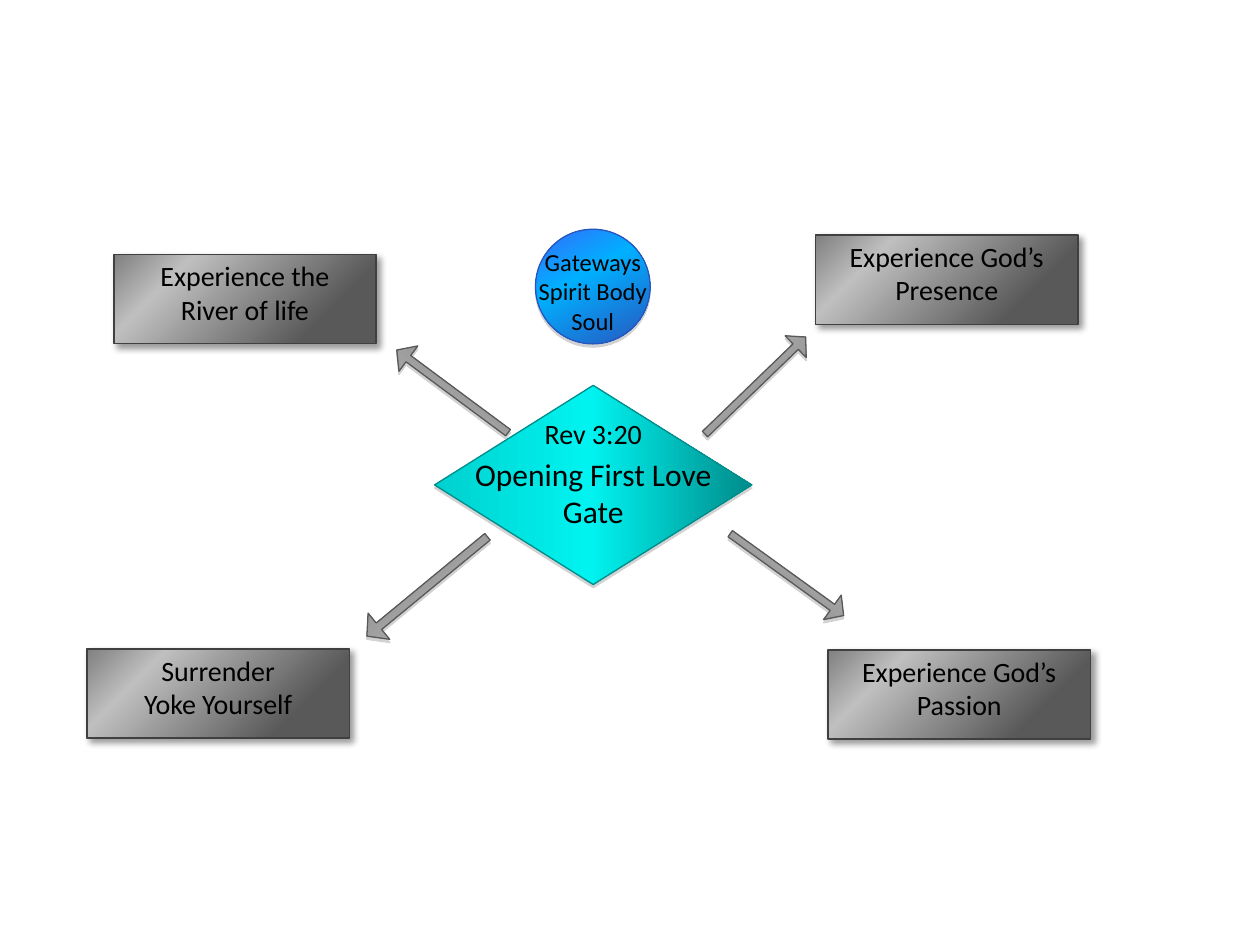
from dataclasses import dataclass

from lxml import etree
from pptx import Presentation
from pptx.dml.color import RGBColor
from pptx.enum.shapes import MSO_SHAPE
from pptx.enum.text import MSO_AUTO_SIZE, PP_ALIGN
from pptx.oxml.ns import qn
from pptx.util import Pt

RECTANGLE, DIAMOND = MSO_SHAPE.RECTANGLE, MSO_SHAPE.DIAMOND
ARROW, OVAL = MSO_SHAPE.RIGHT_ARROW, MSO_SHAPE.OVAL
CENTER = PP_ALIGN.CENTER
GROW = MSO_AUTO_SIZE.SHAPE_TO_FIT_TEXT


@dataclass(frozen=True)
class Look:
    stops: tuple
    angle: int
    outline: str
    outline_width: float
    shadow: tuple


@dataclass(frozen=True)
class Theme:
    font: str = "Calibri"
    text: str = "000000"
    small: int = 14
    body: int = 16
    title: int = 18
    soft: tuple = ("808080", 35, 0, 1.8, 90)
    card: Look = Look(((22, "595959"), (77, "BFBFBF"), (100, "808080")),
                      225, "404040", 1, ("000000", 40, 4, 3, 45))
    gate: Look = Look(((0, "00D1CF"), (49, "00F3F0"), (100, "008C8B")),
                      0, "008C8B", 0.75, soft)
    arrow: Look = Look(((0, "BFBFBF"), (100, "7F7F7F")),
                       90, "595959", 0.75, soft)
    gateways: Look = Look(((0, "336FFA"), (2, "336FFA"), (40, "00B0FF"), (100, "2856BF")),
                          61, "2856BF", 0.75, soft)


THEME = Theme()


def add_color(parent, color):
    return etree.SubElement(parent, qn("a:srgbClr"), val=color)


def paint_gradient(shape, look):
    shape.fill.gradient()
    gradient = shape._element.spPr.find(qn("a:gradFill"))
    for child in list(gradient):
        gradient.remove(child)
    gradient.set("rotWithShape", "1")
    stops = etree.SubElement(gradient, qn("a:gsLst"))
    for position, color in look.stops:
        add_color(etree.SubElement(stops, qn("a:gs"), pos=str(position * 1000)), color)
    etree.SubElement(gradient, qn("a:lin"), ang=str(look.angle * 60000), scaled="0")


def cast_shadow(shape, shadow):
    color, alpha, blur, distance, direction = shadow
    shape.shadow.inherit = False
    effects = shape._element.spPr.find(qn("a:effectLst"))
    outer = etree.SubElement(effects, qn("a:outerShdw"), blurRad=str(Pt(blur)),
                             dist=str(Pt(distance)), dir=str(direction * 60000),
                             rotWithShape="0")
    etree.SubElement(add_color(outer, color), qn("a:alpha"), val=str(alpha * 1000))


def add_solid(shapes, preset, box, look):
    solid = shapes.add_shape(preset, *map(Pt, box))
    paint_gradient(solid, look)
    solid.line.color.rgb = RGBColor.from_string(look.outline)
    solid.line.width = Pt(look.outline_width)
    cast_shadow(solid, look.shadow)
    return solid


def add_label(shapes, box, paragraphs, size):
    frame = shapes.add_textbox(*map(Pt, box)).text_frame
    frame_format = {"word_wrap": True, "auto_size": GROW, "margin_left": 0,
                    "margin_top": 0, "margin_right": 0, "margin_bottom": 0}
    for name, value in frame_format.items():
        setattr(frame, name, value)
    for index, words in enumerate(paragraphs):
        paragraph = frame.add_paragraph() if index else frame.paragraphs[0]
        paragraph.text = words
        paragraph.alignment = CENTER
        for run in paragraph.runs:
            for name, value in {"name": THEME.font, "size": Pt(size)}.items():
                setattr(run.font, name, value)
            run.font.color.rgb = RGBColor.from_string(THEME.text)


def centered(box, down, width, height):
    left, top, box_width, _ = box
    return left + (box_width - width) / 2, top + down, width, height


def add_card(slide, box, paragraphs, text_width):
    card = slide.shapes.add_group_shape().shapes
    add_solid(card, RECTANGLE, box, THEME.card)
    add_label(card, centered(box, 2.4, text_width, 39), paragraphs, THEME.body)


def add_gate(slide, box):
    gate = slide.shapes.add_group_shape().shapes
    add_solid(gate, DIAMOND, box, THEME.gate)
    add_label(gate, centered(box, 18, 73, 19.4), ["Rev 3:20"], THEME.body)
    add_label(gate, centered(box, 39.6, 137, 44), ["Opening First Love Gate"], THEME.title)


def add_gateways(slide, box):
    gateways = slide.shapes.add_group_shape().shapes
    add_solid(gateways, OVAL, box, THEME.gateways)
    add_label(gateways, centered(box, 10.1, 73, 51),
              ["Gateways\vSpirit Body\vSoul"], THEME.small)


def add_arrow(slide, box, rotation):
    arrow = add_solid(slide.shapes, ARROW, box, THEME.arrow)
    arrow.rotation = rotation
    arrow.adjustments[0] = 0.25
    arrow.adjustments[1] = 0.458


def main():
    deck = Presentation()
    deck.slide_width, deck.slide_height = Pt(720), Pt(540)
    slide = deck.slides.add_slide(deck.slide_layouts[6])

    card_size = (150, 51)
    add_card(slide, (65, 145.4, *card_size), ["Experience the River of life"], 113)
    add_gate(slide, (248.3, 220.2, 181.4, 113.8))
    add_card(slide, (466, 134.4, *card_size), ["Experience God’s Presence"], 132)
    add_card(slide, (49.7, 370.8, *card_size), ["Surrender", "Yoke Yourself"], 113)
    add_card(slide, (473.2, 371.4, *card_size), ["Experience God’s\vPassion"], 113)

    for box, rotation in [
        ((218.9, 214.6, 79.2, 18), 216.6),
        ((199.4, 325.4, 89.3, 19.4), 140.5),
        ((409.7, 319.7, 79.9, 17.3), 35.8),
        ((391.7, 211.7, 79.9, 17.3), 316),
    ]:
        add_arrow(slide, box, rotation)

    add_gateways(slide, (306, 131, 65.5, 65.5))
    deck.save("out.pptx")


if __name__ == "__main__":
    main()
